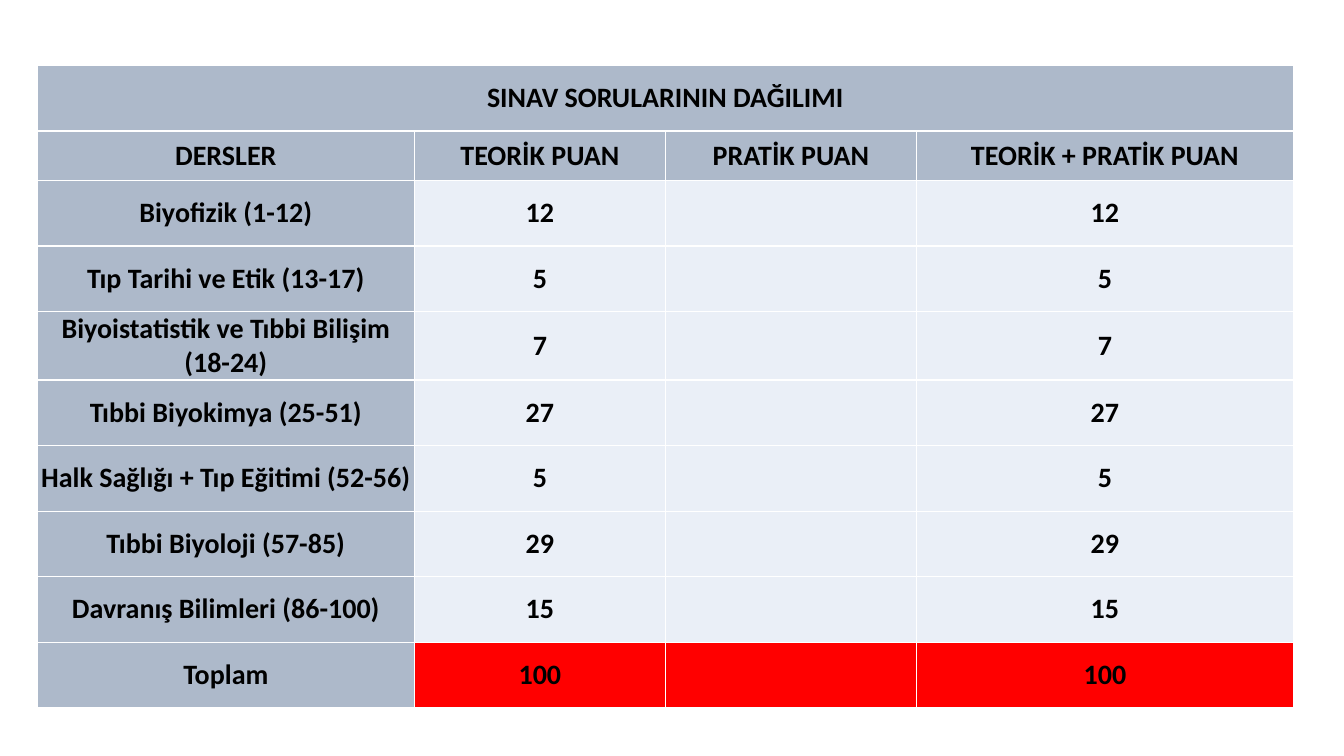
from lxml.etree import SubElement
from pptx import Presentation
from pptx.dml.color import RGBColor
from pptx.enum.text import MSO_ANCHOR, PP_ALIGN
from pptx.oxml.ns import qn
from pptx.util import Inches, Pt

HEADER_FILL, SCORE_FILL, TOTAL_FILL = "ADB9CA", "EAEFF7", "FF0000"

TITLE = "SINAV SORULARININ DAĞILIMI"
HEADINGS = ["DERSLER", "TEORİK PUAN", "PRATİK PUAN", "TEORİK + PRATİK PUAN"]
COURSE_SCORES = [
    ("Biyofizik (1-12)", 12),
    ("Tıp Tarihi ve Etik (13-17)", 5),
    ("Biyoistatistik ve Tıbbi Bilişim (18-24)", 7),
    ("Tıbbi Biyokimya (25-51)", 27),
    ("Halk Sağlığı + Tıp Eğitimi (52-56)", 5),
    ("Tıbbi Biyoloji (57-85)", 29),
    ("Davranış Bilimleri (86-100)", 15),
]
COLUMN_WIDTHS = [3.74, 2.49, 2.49, 3.74]
ROW_HEIGHT, HEADING_HEIGHT = 0.65, 0.49


def color(hex_code):
    return RGBColor.from_string(hex_code)


class SlideBuilder:
    """Holds the text style and the slide being filled."""

    font_format = {"name": "Calibri", "size": Pt(20), "bold": True}
    cell_format = {
        "vertical_anchor": MSO_ANCHOR.MIDDLE,
        "margin_left": 0,
        "margin_right": 0,
        "margin_top": 0,
        "margin_bottom": 0,
    }
    text_color = "000000"
    border_color = "FFFFFF"
    border_width = Pt(1)

    def __init__(self, slide):
        self.slide = slide

    def add_table(self, left, top, column_widths, row_heights):
        frame = self.slide.shapes.add_table(
            len(row_heights), len(column_widths), Inches(left), Inches(top),
            Inches(sum(column_widths)), Inches(sum(row_heights)))
        table = frame.table
        for column, width in zip(table.columns, column_widths):
            column.width = Inches(width)
        for row, height in zip(table.rows, row_heights):
            row.height = Inches(height)
        return table

    def add_borders(self, cell):
        properties = cell._tc.get_or_add_tcPr()
        for side in ("a:lnL", "a:lnR", "a:lnT", "a:lnB"):
            line = SubElement(properties, qn(side), w=str(self.border_width))
            fill = SubElement(line, qn("a:solidFill"))
            SubElement(fill, qn("a:srgbClr"), val=self.border_color)

    def fill_cell(self, cell, text, fill):
        for name, value in self.cell_format.items():
            setattr(cell, name, value)
        self.add_borders(cell)
        cell.fill.solid()
        cell.fill.fore_color.rgb = color(fill)
        paragraph = cell.text_frame.paragraphs[0]
        paragraph.alignment = PP_ALIGN.CENTER
        if text:
            run = paragraph.add_run()
            run.text = text
            for name, value in self.font_format.items():
                setattr(run.font, name, value)
            run.font.color.rgb = color(self.text_color)


def main():
    presentation = Presentation()
    presentation.slide_width = Inches(13.33)
    presentation.slide_height = Inches(7.5)
    builder = SlideBuilder(presentation.slides.add_slide(presentation.slide_layouts[6]))

    total = sum(score for _, score in COURSE_SCORES)
    rows = [([TITLE, "", "", ""], HEADER_FILL), (HEADINGS, HEADER_FILL)]
    for course, score in COURSE_SCORES:
        rows.append(([course, str(score), "", str(score)], SCORE_FILL))
    rows.append((["Toplam", str(total), "", str(total)], TOTAL_FILL))

    row_heights = [ROW_HEIGHT] * len(rows)
    row_heights[1] = HEADING_HEIGHT
    table = builder.add_table(0.37, 0.65, COLUMN_WIDTHS, row_heights)
    for row_index, (texts, row_fill) in enumerate(rows):
        for column_index, text in enumerate(texts):
            fill = row_fill if column_index else HEADER_FILL
            builder.fill_cell(table.cell(row_index, column_index), text, fill)
    table.cell(0, 0).merge(table.cell(0, len(HEADINGS) - 1))

    presentation.save("out.pptx")


if __name__ == "__main__":
    main()
